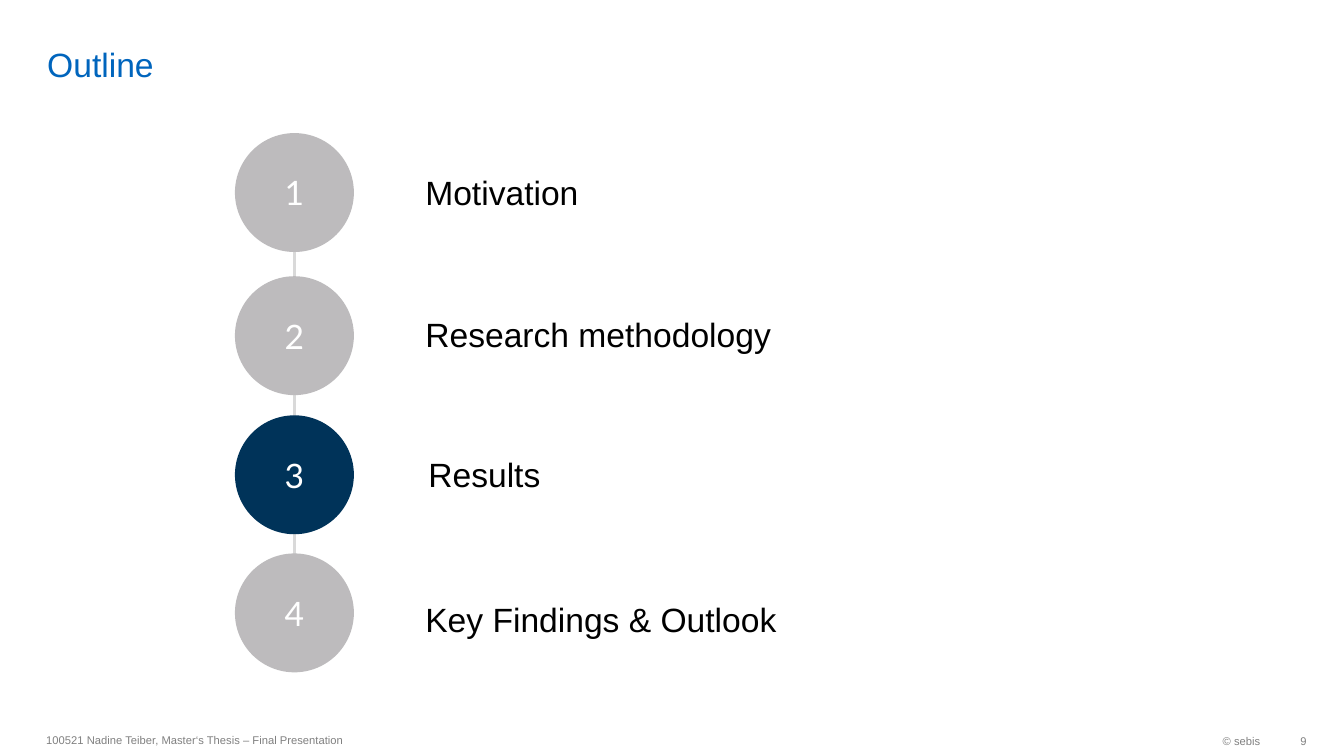
from lxml import etree
from pptx import Presentation
from pptx import util as u
from pptx.dml.color import RGBColor
from pptx.enum import shapes, text
from pptx.oxml import ns

COLORS = {
    "title": "0065BD",
    "body": "000000",
    "footer": "808080",
    "line": "D9D9D9",
    "inactive": "BDBBBD",
    "active": "003359",
    "number": "FFFFFF",
}
LEFT, RIGHT, CENTER = text.PP_ALIGN.LEFT, text.PP_ALIGN.RIGHT, text.PP_ALIGN.CENTER
TOP, MIDDLE, BOTTOM = text.MSO_ANCHOR.TOP, text.MSO_ANCHOR.MIDDLE, text.MSO_ANCHOR.BOTTOM


class OutlinePage:
    """Draws styled outline elements on one slide."""

    def __init__(self, page):
        self.page = page

    def color(self, name):
        return RGBColor.from_string(COLORS[name])

    def set_words(self, shape, words, size, color, font="Arial", align=LEFT, anchor=TOP):
        frame = shape.text_frame
        frame.vertical_anchor = anchor
        para = frame.paragraphs[0]
        para.text = words
        para.alignment = align
        para.font.name = font
        para.font.size = u.Pt(size)
        para.font.color.rgb = self.color(color)

    def label(self, words, place, size, color, align=LEFT, anchor=TOP,
              wrap=True, right=0.1, margin=0.05):
        box = self.page.shapes.add_textbox(*map(u.Inches, place))
        frame = box.text_frame
        frame.word_wrap = wrap
        frame.margin_right = u.Inches(right)
        frame.margin_top = frame.margin_bottom = u.Inches(margin)
        self.set_words(box, words, size, color, align=align, anchor=anchor)

    def circle(self, number, left, top, size, fill):
        disc = self.page.shapes.add_shape(
            shapes.MSO_SHAPE.OVAL, *map(u.Inches, (left, top, size, size)))
        disc.shadow.inherit = False
        disc.fill.solid()
        disc.fill.fore_color.rgb = self.color(fill)
        disc.line.fill.background()
        self.set_words(disc, str(number), 24, "number", "Lato", CENTER, MIDDLE)

    def line(self, x, top, bottom):
        link = self.page.shapes.add_connector(
            shapes.MSO_CONNECTOR.STRAIGHT, *map(u.Inches, (x, top, x, bottom)))
        link.line.color.rgb = self.color("line")
        link.line.width = u.Pt(2)
        etree.SubElement(link._element.spPr, ns.qn("a:effectLst"))


def main():
    deck = Presentation()
    deck.slide_width, deck.slide_height = u.Inches(13.33), u.Inches(7.5)
    outline = OutlinePage(deck.slides.add_slide(deck.slide_layouts[6]))

    outline.label("Outline", (0.37, 0.05, 11.58, 0.79), 24, "title",
                  anchor=BOTTOM, margin=0)
    outline.line(2.92, 2.5, 6.14)

    chapters = [
        ("Motivation", 1.32, 4.12, 1.66),
        ("Research methodology", 2.74, 4.12, 3.07),
        ("Results", 4.12, 4.15, 4.45),
        ("Key Findings & Outlook", 5.49, 4.12, 5.89),
    ]
    for number, (name, circle_top, left, top) in enumerate(chapters, 1):
        fill = "active" if name == "Results" else "inactive"
        outline.circle(number, 2.33, circle_top, 1.18, fill)
        outline.label(name, (left, top, 5.67, 0.5), 24, "body")

    outline.label("100521 Nadine Teiber, Master‘s Thesis – Final Presentation",
                  (0.36, 7.18, 6.3, 0.32), 8, "footer", anchor=MIDDLE)
    outline.label("© sebis", (10.26, 7.19, 2.34, 0.32), 8, "footer",
                  RIGHT, MIDDLE, wrap=False)
    outline.label("9", (12.6, 7.19, 0.36, 0.32), 8, "footer",
                  RIGHT, MIDDLE, wrap=False, right=0)
    deck.save("out.pptx")


if __name__ == "__main__":
    main()
